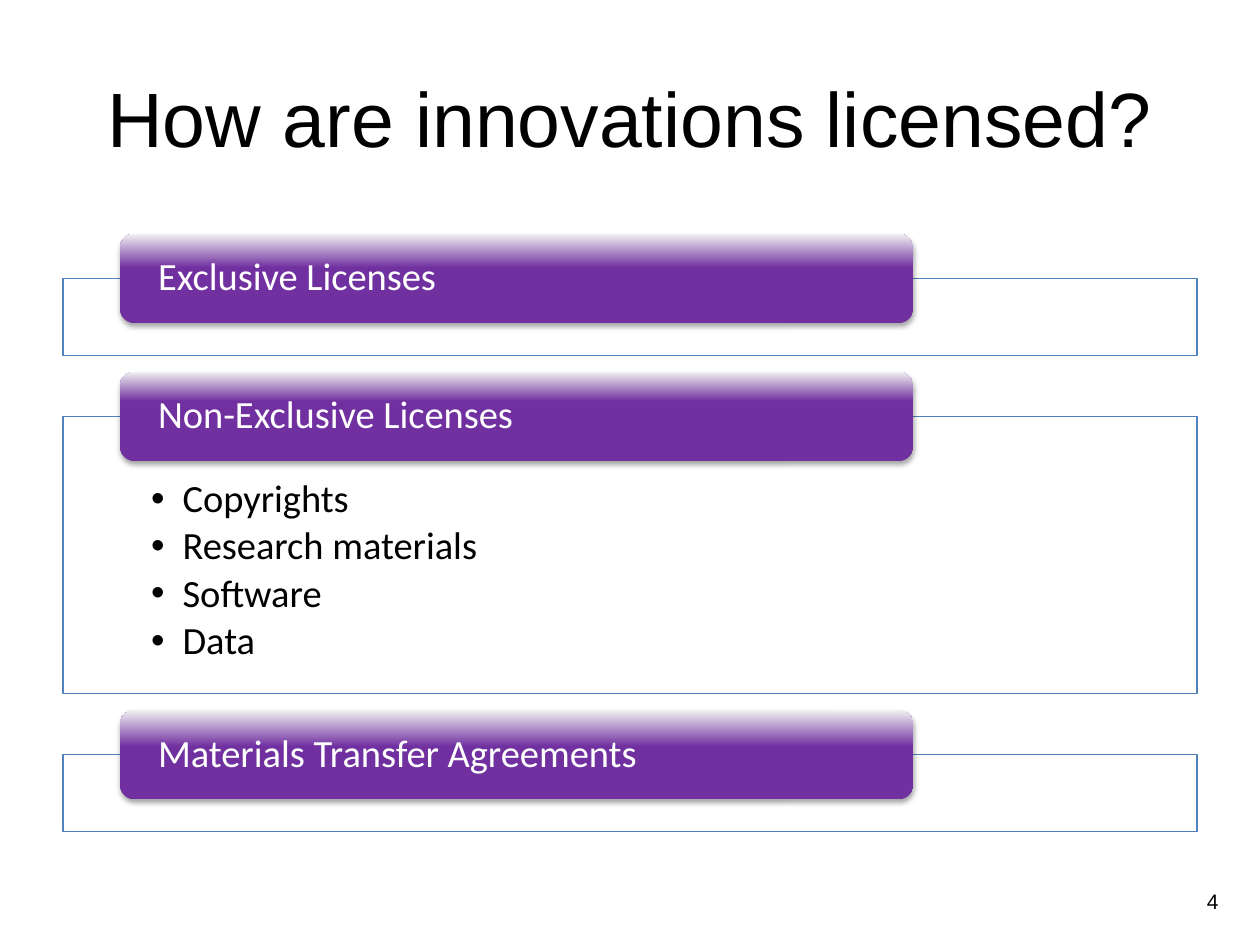
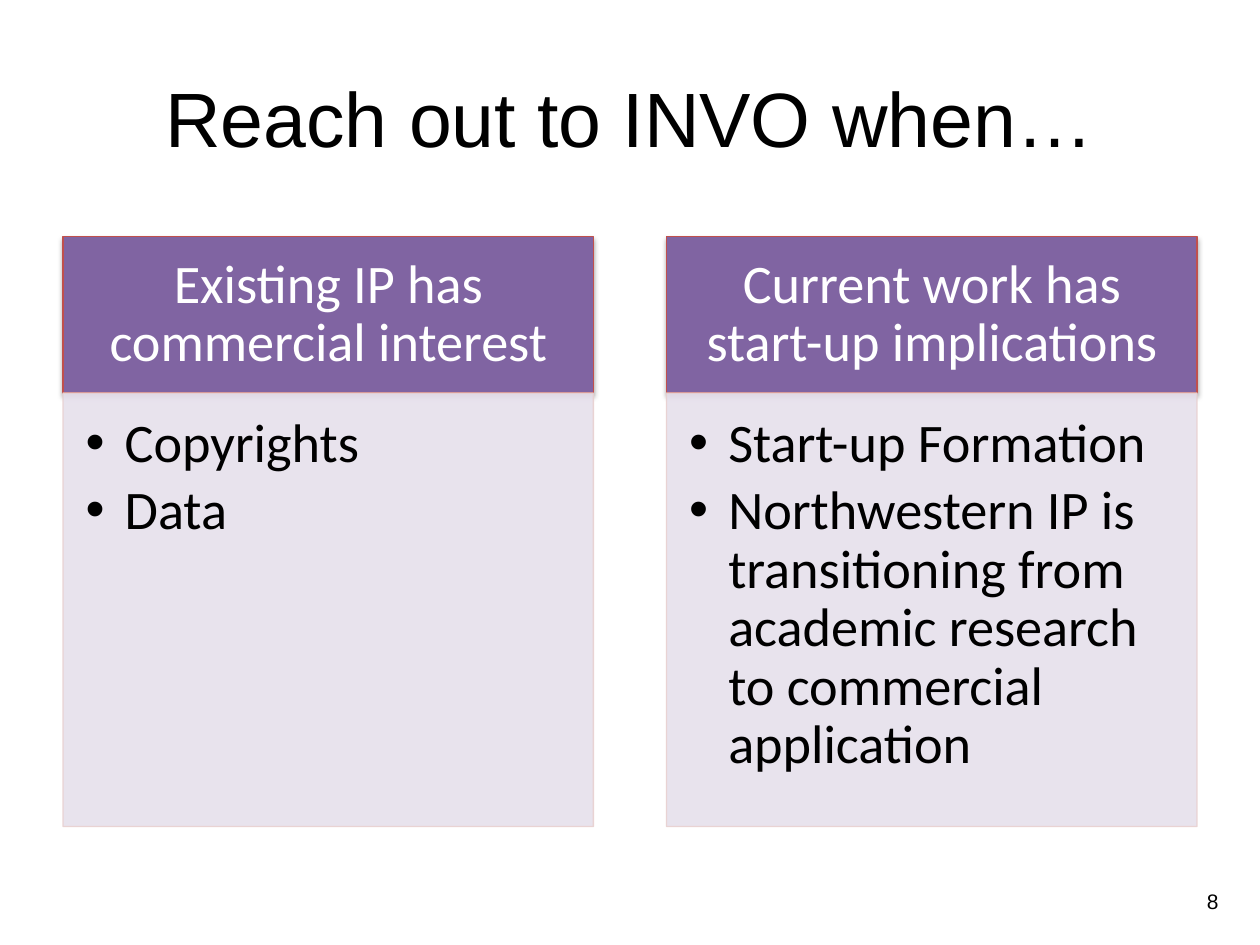
"""Build two licensing slides on a grid of 20 columns by 15 rows."""
from lxml import etree
from pptx import Presentation
from pptx import util as u
from pptx.dml.color import RGBColor
from pptx.enum import shapes, text
from pptx.oxml.ns import qn

COLUMNS, ROWS = 20, 15
BLACK = RGBColor(0x00, 0x00, 0x00)
WHITE = RGBColor(0xFF, 0xFF, 0xFF)
PALE_GREY = RGBColor(0xF2, 0xF2, 0xF2)
BLUE = RGBColor(0x4F, 0x81, 0xBD)
PURPLE = RGBColor(0x70, 0x30, 0xA0)
MUTED_PURPLE = RGBColor(0x80, 0x64, 0xA2)
LILAC = RGBColor(0xE6, 0xE0, 0xEC)
RED = RGBColor(0xC0, 0x50, 0x4D)
PALE_RED = RGBColor(0xE8, 0xD0, 0xD0)
LEFT, CENTER, RIGHT = text.PP_ALIGN.LEFT, text.PP_ALIGN.CENTER, text.PP_ALIGN.RIGHT
TOP, MIDDLE = text.MSO_ANCHOR.TOP, text.MSO_ANCHOR.MIDDLE
RECTANGLE = shapes.MSO_SHAPE.RECTANGLE
ROUNDED = shapes.MSO_SHAPE.ROUNDED_RECTANGLE

LICENSES = [
    ("Exclusive Licenses", [], 1.22, 0.62),
    ("Non-Exclusive Licenses",
     ["Copyrights", "Research materials", "Software", "Data"], 4.4, 0.67),
    ("Materials Transfer Agreements", [], 1.22, 0.59),
]
REASONS = [
    ("Existing IP has commercial interest", ["Copyrights", "Data"]),
    ("Current work has start-up implications",
     ["Start-up Formation",
      "Northwestern IP is transitioning from academic research to commercial application"]),
]


def write(shape, lines, font="Calibri", size=22, color=BLACK, align=LEFT, anchor=TOP,
          insets=(0.1, 0.05, 0.1, 0.05), spacing=0.9, after=0, hang=0):
    """Fill a shape with formatted paragraphs, bulleted when hang is given."""
    frame = shape.text_frame
    frame.word_wrap = True
    frame.auto_size = text.MSO_AUTO_SIZE.NONE
    frame.vertical_anchor = anchor
    (frame.margin_left, frame.margin_top,
     frame.margin_right, frame.margin_bottom) = map(u.Inches, insets)
    for index, line in enumerate(lines):
        paragraph = frame.paragraphs[0] if index == 0 else frame.add_paragraph()
        if hang:
            properties = paragraph._p.get_or_add_pPr()
            properties.set("marL", str(u.Inches(hang)))
            properties.set("indent", str(-u.Inches(hang)))
            etree.SubElement(properties, qn("a:buFont"), typeface="Arial")
            etree.SubElement(properties, qn("a:buChar"), char="•")
        paragraph.alignment = align
        paragraph.line_spacing = spacing
        paragraph.space_before = u.Pt(0)
        paragraph.space_after = u.Pt(after)
        run = paragraph.add_run()
        run.text = line
        run.font.name, run.font.size = font, u.Pt(size)
        run.font.color.rgb = color


def set_alpha(fill_format, percent):
    """Make the solid colour inside a shape property partly transparent."""
    for color in fill_format.iter(qn("a:srgbClr")):
        etree.SubElement(color, qn("a:alpha"), val=str(percent * 1000))


class Deck:
    """Hold the presentation, its grid and the current slide."""

    def __init__(self):
        self.presentation = Presentation()
        self.presentation.slide_width = u.Inches(10)
        self.presentation.slide_height = u.Inches(7.5)
        self.slide = None

    def place(self, column, row, width, height):
        """Turn grid columns and rows into slide lengths."""
        across = self.presentation.slide_width / COLUMNS
        down = self.presentation.slide_height / ROWS
        return (round(column * across), round(row * down),
                round(width * across), round(height * down))

    def add_slide(self, title, number):
        """Start a slide with its title and slide number."""
        self.slide = self.presentation.slides.add_slide(self.presentation.slide_layouts[5])
        heading = self.slide.shapes.title
        heading.left, heading.top, heading.width, heading.height = self.place(1, 0.6, 18, 2.5)
        write(heading, [title], font="Arial", size=44, align=CENTER, anchor=MIDDLE, spacing=1)
        number_box = self.slide.shapes.add_textbox(*self.place(18.24, 13.9, 1.3, 0.8))
        write(number_box, [str(number)], font="Arial", size=12, align=RIGHT,
              anchor=MIDDLE, spacing=1, after=6)

    def add_box(self, kind, area, fill, line=None, alpha=100, line_alpha=100):
        """Add a filled shape with an optional thin outline."""
        shape = self.slide.shapes.add_shape(kind, *self.place(*area))
        shape.shadow.inherit = False
        shape.fill.solid()
        shape.fill.fore_color.rgb = fill
        if alpha < 100:
            set_alpha(shape._element.spPr.find(qn("a:solidFill")), alpha)
        if line is None:
            shape.line.fill.background()
        else:
            shape.line.color.rgb = line
            shape.line.width = u.Pt(0.75)
            if line_alpha < 100:
                set_alpha(shape._element.spPr.find(qn("a:ln")), line_alpha)
        return shape

    def add_shadow(self, shape):
        """Give a shape a soft shadow below."""
        effects = shape._element.spPr.find(qn("a:effectLst"))
        shadow = etree.SubElement(effects, qn("a:outerShdw"), blurRad=str(u.Pt(3.1)),
                                  dist=str(u.Pt(1.8)), dir="5400000", rotWithShape="0")
        etree.SubElement(shadow, qn("a:srgbClr"), val=str(BLACK))
        set_alpha(shadow, 35)

    def add_pill(self, label, area, purple_share):
        """Add a rounded label that fades to grey at its top."""
        pill = self.add_box(ROUNDED, area, PURPLE)
        pill.fill.gradient()
        pill.fill.gradient_angle = 90
        stops = zip(pill.fill.gradient_stops, (PURPLE, PALE_GREY), (purple_share, 1))
        for stop, color, position in stops:
            stop.color.rgb = color
            stop.position = position
        self.add_shadow(pill)
        write(pill, [label], color=WHITE, anchor=MIDDLE, insets=(0.27, 0, 0.27, 0))

    def add_license(self, label, items, row, height, purple_share):
        """Add an outlined frame with a pill centred on its top edge."""
        frame = self.add_box(RECTANGLE, (1, row, 18, height), WHITE, BLUE, alpha=90)
        if items:
            write(frame, items, insets=(0.7, 0.5, 0.7, 0.17), after=3.3, hang=0.25)
        pill_height = 1.42
        self.add_pill(label, (1.9, row - pill_height / 2, 12.6, pill_height), purple_share)

    def add_card(self, label, items, column, width):
        """Add a header block above a bulleted body."""
        top, header_height, body_height = 3.76, 2.48, 6.88
        header = self.add_box(RECTANGLE, (column, top, width, header_height), MUTED_PURPLE, RED)
        self.add_shadow(header)
        write(header, [label], size=31, color=WHITE, align=CENTER, anchor=MIDDLE,
              insets=(0.24, 0.14, 0.24, 0.14))
        body = self.add_box(RECTANGLE, (column, top + header_height, width, body_height),
                            LILAC, PALE_RED, alpha=90, line_alpha=90)
        write(body, items, size=31, insets=(0.18, 0.18, 0.24, 0.27), after=4.65, hang=0.31)


def main():
    """Build both slides and save them."""
    deck = Deck()

    deck.add_slide("How are innovations licensed?", 4)
    row, gap = 4.42, 0.97
    for label, items, height, purple_share in LICENSES:
        deck.add_license(label, items, row, height, purple_share)
        row += height + gap

    deck.add_slide("Reach out to INVO when…", 8)
    card_width = 8.42
    for (label, items), column in zip(REASONS, (1, COLUMNS - 1 - card_width)):
        deck.add_card(label, items, column, card_width)

    deck.presentation.save("out.pptx")


if __name__ == "__main__":
    main()
